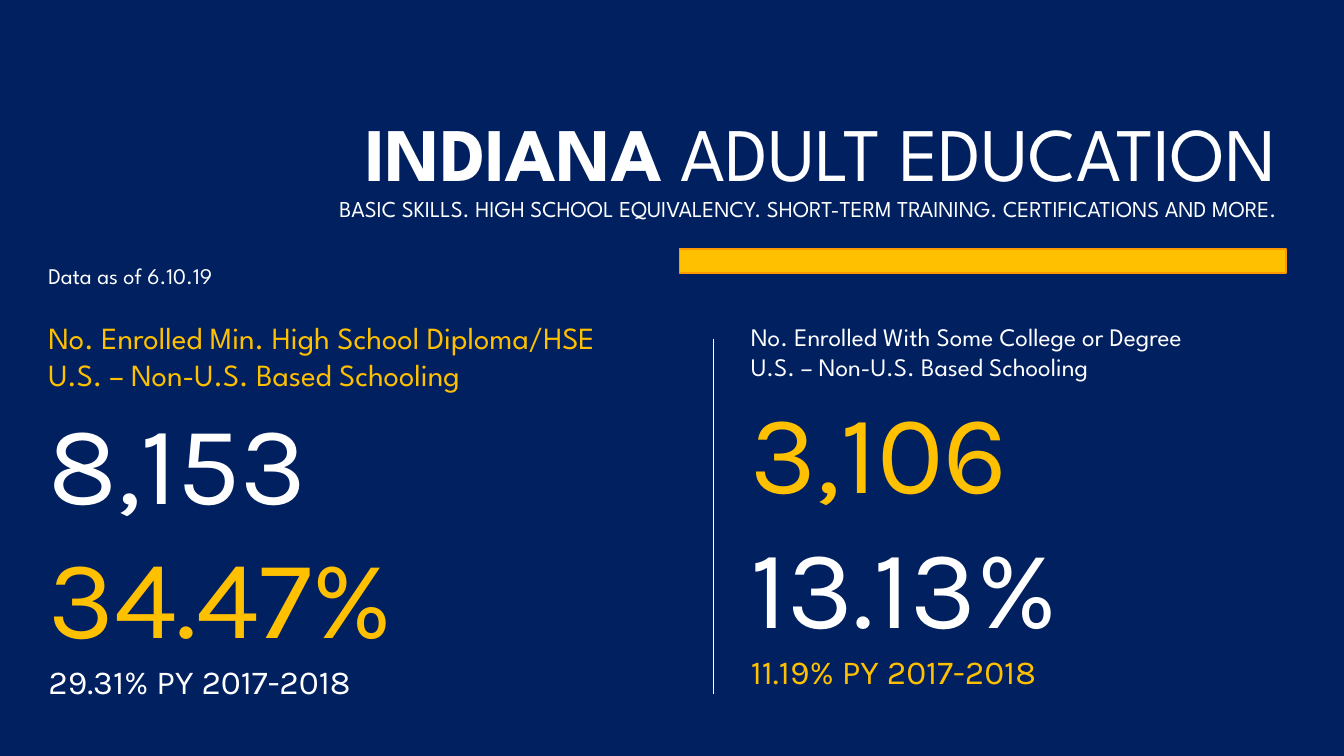
from dataclasses import dataclass

import pptx
import pptx.dml.color
import pptx.enum.shapes
import pptx.enum.text
import pptx.oxml.ns
import pptx.util
from lxml import etree

Pt = pptx.util.Pt
RGB = pptx.dml.color.RGBColor.from_string
MSO_ANCHOR = pptx.enum.text.MSO_ANCHOR
MSO_AUTO_SIZE = pptx.enum.text.MSO_AUTO_SIZE
PP_ALIGN = pptx.enum.text.PP_ALIGN


@dataclass(frozen=True)
class Theme:
    navy: str = "002060"
    white: str = "FFFFFF"
    gold: str = "FFC000"
    orange: str = "FF9900"
    heading_font: str = "League Spartan"
    figure_font: str = "Karla"
    title: float = 54
    subtitle: float = 16.2
    date: float = 16
    figure: float = 80
    prior_year: float = 24


THEME = Theme()


def add_run(p, text, size, font, color, bold=False):
    r = p.add_run()
    r.text = text
    for name, value in {"size": Pt(size), "name": font, "bold": bold}.items():
        setattr(r.font, name, value)
    r.font.color.rgb = RGB(color)


def add_text_box(slide, box, **frame_format):
    tf = slide.shapes.add_textbox(*map(Pt, box)).text_frame
    for name, value in frame_format.items():
        setattr(tf, name, value)
    return tf


def add_title(slide, box):
    tf = add_text_box(slide, box, word_wrap=True, margin_bottom=Pt(23),
                      vertical_anchor=MSO_ANCHOR.MIDDLE)
    p = tf.paragraphs[0]
    p.alignment = PP_ALIGN.RIGHT
    p.line_spacing = 0.9
    font, color = THEME.heading_font, THEME.white
    add_run(p, "INDIANA", THEME.title, font, color, bold=True)
    add_run(p, " ADULT EDUCATION", THEME.title, font, color)
    p.add_line_break()
    add_run(p, "BASIC SKILLS. HIGH SCHOOL EQUIVALENCY. SHORT-TERM TRAINING. "
               "CERTIFICATIONS AND MORE.", THEME.subtitle, font, color)


def add_accent_bar(slide, box):
    sp = slide.shapes.add_shape(
        pptx.enum.shapes.MSO_SHAPE.RECTANGLE, *map(Pt, box))
    sp.shadow.inherit = False
    sp.fill.solid()
    sp.fill.fore_color.rgb = RGB(THEME.gold)
    sp.line.color.rgb = RGB(THEME.orange)
    sp.line.width = Pt(1)


def add_date(slide, box):
    tf = add_text_box(slide, box, word_wrap=False,
                      auto_size=MSO_AUTO_SIZE.SHAPE_TO_FIT_TEXT)
    add_run(tf.paragraphs[0], "Data as of 6.10.19", THEME.date,
            THEME.heading_font, THEME.white)


def add_enrollment(slide, box, group, count, share, prior, label_size, main, contrast):
    """Stack label and figures; main colors the label and share, contrast the rest."""
    tf = add_text_box(slide, box, word_wrap=True,
                      auto_size=MSO_AUTO_SIZE.SHAPE_TO_FIT_TEXT)
    rows = [
        (group, label_size, THEME.heading_font, main),
        ("U.S. – Non-U.S. Based Schooling", label_size, THEME.heading_font, main),
        (count, THEME.figure, THEME.figure_font, contrast),
        (share, THEME.figure, THEME.figure_font, main),
        (f"{prior} PY 2017-2018", THEME.prior_year, THEME.figure_font, contrast),
    ]
    for i, row in enumerate(rows):
        p = tf.add_paragraph() if i else tf.paragraphs[0]
        add_run(p, *row)


def add_divider(slide, box):
    x, y, _, height = box
    line = slide.shapes.add_connector(
        pptx.enum.shapes.MSO_CONNECTOR.STRAIGHT, Pt(x), Pt(y), Pt(x), Pt(y + height))
    line.line.color.rgb = RGB(THEME.white)
    line.line.width = Pt(0.75)
    etree.SubElement(line.element.spPr, pptx.oxml.ns.qn("a:effectLst"))


def main():
    prs = pptx.Presentation()
    prs.slide_width, prs.slide_height = Pt(960), Pt(540)
    slide = prs.slides.add_slide(prs.slide_layouts[6])
    slide.background.fill.solid()
    slide.background.fill.fore_color.rgb = RGB(THEME.navy)

    left, right = 27.4, 918.7
    add_title(slide, (127.4, 80, right - 127.4, 101.5))
    add_accent_bar(slide, (485.3, 177.8, right - 485.3, 17.3))
    add_date(slide, (left, 183.6, 154, 26.6))
    add_enrollment(slide, (left, 223.9, 469.4, 326.9),
                   "No. Enrolled Min. High School Diploma/HSE",
                   "8,153", "34.47%", "29.31%", 22, THEME.gold, THEME.white)
    add_enrollment(slide, (529.2, 226.1, 403.2, 295.9),
                   "No. Enrolled With Some College or Degree",
                   "3,106", "13.13%", "11.19%", 18, THEME.white, THEME.gold)
    add_divider(slide, (509.8, 241.9, 0, 253.5))
    prs.save("out.pptx")


if __name__ == "__main__":
    main()
